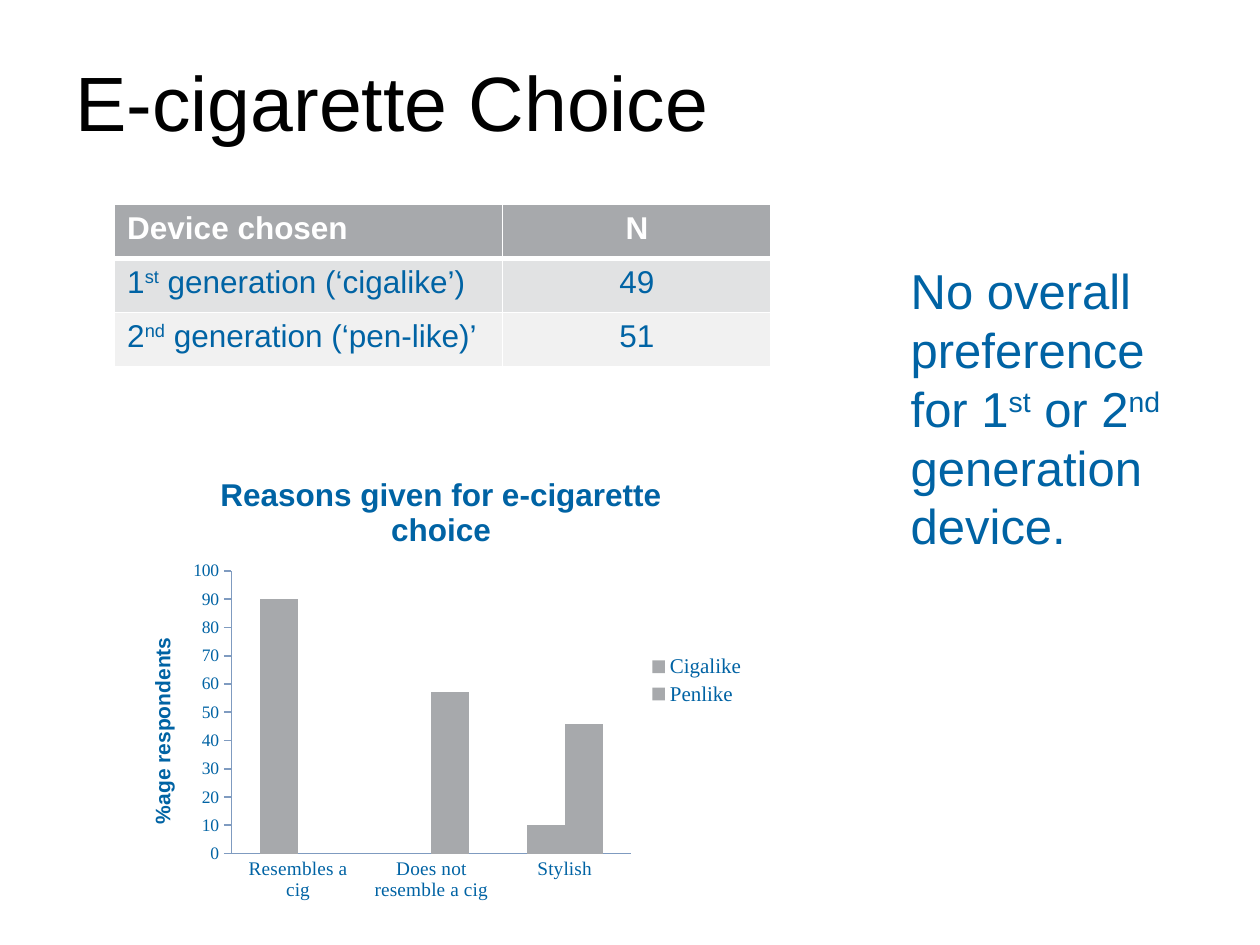
"""Build the e-cigarette choice slide with its device table and reasons chart."""
import pptx
import pptx.chart.data
import pptx.dml.color
import pptx.enum.chart
import pptx.enum.text
import pptx.oxml
import pptx.util

BLUE, GREY, WHITE, AXIS = "0063A4", "A7A9AC", "FFFFFF", "7F9BC0"
NS = 'xmlns:a="http://schemas.openxmlformats.org/drawingml/2006/main" xmlns:c="http://schemas.openxmlformats.org/drawingml/2006/chart"'
CENTER = pptx.enum.text.PP_ALIGN.CENTER


def rgb(value):
    return pptx.dml.color.RGBColor.from_string(value)


def write(paragraph, pieces, size, color, bold=False, face="Arial"):
    for position, piece in enumerate(pieces):
        run = paragraph.add_run()
        run.text = piece
        look = {"size": pptx.util.Pt(size), "bold": bold, "name": face}
        for key, value in look.items():
            setattr(run.font, key, value)
        run.font.color.rgb = rgb(color)
        if position % 2:
            run.font._element.set("baseline", "30000")


deck = pptx.Presentation()
deck.slide_width, deck.slide_height = pptx.util.Inches(10), pptx.util.Inches(7.5)
column, row = deck.slide_width / 100, deck.slide_height / 100
slide = deck.slides.add_slide(deck.slide_layouts[6])

statements = [
    ((5, 2.8, 90, 15.73), ["E-cigarette Choice"], 44, "000000", pptx.enum.text.MSO_ANCHOR.MIDDLE),
    ((71.3, 26.93, 24.4, 32.8),
     ["No overall preference for 1", "st", " or 2", "nd", " generation device."],
     28, BLUE, pptx.enum.text.MSO_ANCHOR.TOP),
]
for (left, top, width, height), pieces, size, color, anchor in statements:
    frame = slide.shapes.add_textbox(
        int(left * column), int(top * row), int(width * column), int(height * row)).text_frame
    frame.word_wrap, frame.vertical_anchor = True, anchor
    write(frame.paragraphs[0], pieces, size, color)

devices = [
    ([["Device chosen"], ["N"]], GREY, WHITE),
    ([["1", "st", " generation (‘cigalike’)"], ["49"]], "E1E2E3", BLUE),
    ([["2", "nd", " generation (‘pen-like)’"], ["51"]], "F1F1F1", BLUE),
]
choices = slide.shapes.add_table(
    3, 2, int(9.1 * column), int(21.6 * row), int(52.1 * column), int(17.2 * row)).table
for index, share in enumerate((30.8, 21.3)):
    choices.columns[index].width = int(share * column)
for r, (entries, fill, color) in enumerate(devices):
    for c, pieces in enumerate(entries):
        cell = choices.cell(r, c)
        write(cell.text_frame.paragraphs[0], pieces, 18, color, r == 0)
        if c:
            cell.text_frame.paragraphs[0].alignment = CENTER
        edges = {"lnL": 1, "lnR": 1, "lnT": 3 if r == 1 else 1, "lnB": 3 if r == 0 else 1}
        for edge, points in edges.items():
            cell._tc.get_or_add_tcPr().append(pptx.oxml.parse_xml(
                f'<a:{edge} {NS} w="{points * 12700}"><a:solidFill>'
                f'<a:srgbClr val="{WHITE}"/></a:solidFill></a:{edge}>'))
        cell.fill.solid()
        cell.fill.fore_color.rgb = rgb(fill)

reasons = pptx.chart.data.CategoryChartData()
reasons.categories = ["Resembles a cig", "Does not resemble a cig", "Stylish"]
reasons.add_series("Cigalike", (90, None, 10))
reasons.add_series("Penlike", (None, 57, 46))
chart = slide.shapes.add_chart(
    pptx.enum.chart.XL_CHART_TYPE.COLUMN_CLUSTERED, int(9.8 * column), int(47.87 * row),
    int(50.4 * column), int(48.27 * row), reasons).chart
chart.has_title = chart.has_legend = True
write(chart.chart_title.text_frame.paragraphs[0],
      ["Reasons given for e-cigarette choice"], 18, BLUE, True)
chart.chart_title.include_in_layout = False
chart.legend.position = pptx.enum.chart.XL_LEGEND_POSITION.RIGHT
chart.legend.include_in_layout = False

bars = chart.plots[0]
bars.gap_width, bars.overlap, bars.vary_by_categories = 150, 0, False
for series in bars.series:
    series.format.fill.solid()
    series.format.fill.fore_color.rgb = rgb(GREY)

percent, reason = chart.value_axis, chart.category_axis
percent.minimum_scale, percent.maximum_scale, percent.major_unit = 0, 100, 10
percent.has_title = True
write(percent.axis_title.text_frame.paragraphs[0], ["%age respondents"], 12, BLUE, True)
marks = pptx.enum.chart.XL_TICK_MARK
for axis, tick in ((percent, marks.OUTSIDE), (reason, marks.NONE)):
    axis.has_major_gridlines = False
    axis.major_tick_mark, axis.minor_tick_mark = tick, marks.NONE
    axis.format.line.color.rgb = rgb(AXIS)
    axis.format.line.width = pptx.util.Pt(1)
for font, size in ((chart.font, 10), (percent.tick_labels.font, 10),
                   (reason.tick_labels.font, 11), (chart.legend.font, 12)):
    look = {"size": pptx.util.Pt(size), "bold": False,
            "name": "Arial" if font is chart.font else "Times New Roman"}
    for key, value in look.items():
        setattr(font, key, value)
    font.color.rgb = rgb(BLUE)

plot_area = chart._chartSpace.chart.plotArea
for old in plot_area.findall("{*}layout"):
    plot_area.remove(old)
shares = "".join(f'<c:{key} val="{value}"/>' for key, value in
                 {"x": 0.17, "y": 0.26, "w": 0.63, "h": 0.62}.items())
plot_area.insert(0, pptx.oxml.parse_xml(
    f'<c:layout {NS}><c:manualLayout><c:layoutTarget val="inner"/><c:xMode val="edge"/>'
    f'<c:yMode val="edge"/>{shares}</c:manualLayout></c:layout>'))

deck.save("out.pptx")
